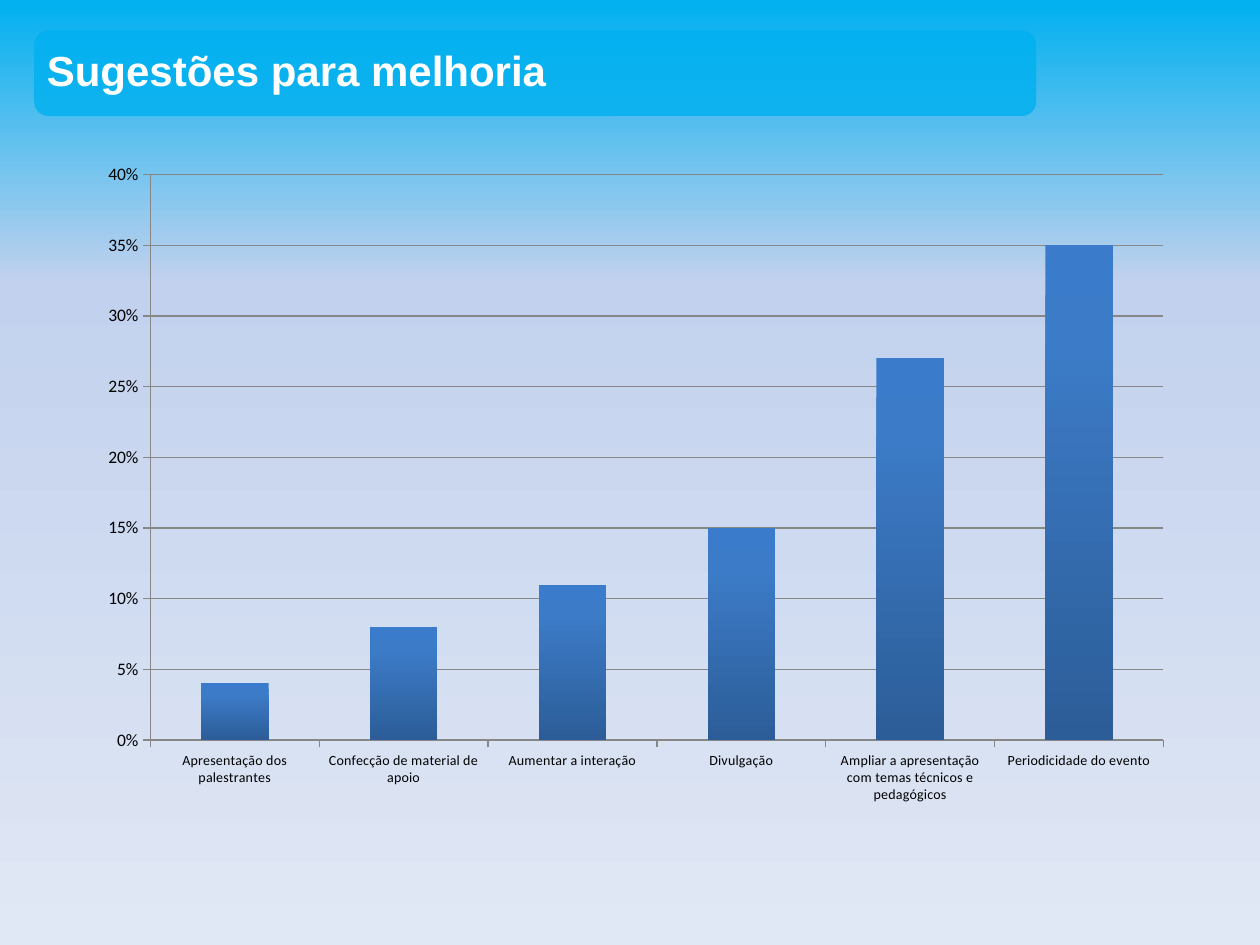
from dataclasses import dataclass

from lxml import etree
from pptx import Presentation
from pptx import util as u
from pptx.chart.data import CategoryChartData
from pptx.dml.color import RGBColor
from pptx.enum import chart as ch, shapes, text
from pptx.oxml.ns import qn


@dataclass(frozen=True)
class Theme:
    sky: str = "00B0F0"
    white: str = "FFFFFF"
    ink: str = "000000"
    rule: str = "878787"
    back: tuple = ((0, "00B0F0"), (30, "C2D1ED"), (100, "E1E8F5"))
    bar: tuple = ((0, "3A7CCB"), (20, "3C7BC7"), (100, "2C5D98"))
    head: str = "Arial"
    body: str = "Calibri"
    title: int = 24
    axis: int = 10
    label: int = 8


T = Theme()
DATA = {
    "Apresentação dos palestrantes": 0.04,
    "Confecção de material de apoio": 0.08,
    "Aumentar a interação": 0.11,
    "Divulgação": 0.15,
    "Ampliar a apresentação com temas técnicos e pedagógicos": 0.27,
    "Periodicidade do evento": 0.35,
}


def style(font, size, name, color, bold=False):
    font.size, font.name, font.bold = u.Pt(size), name, bold
    font.color.rgb = RGBColor.from_string(color)


def write(frame, words, align=text.PP_ALIGN.LEFT, **form):
    frame.text = words
    frame.word_wrap = True
    frame.vertical_anchor = text.MSO_ANCHOR.MIDDLE
    par = frame.paragraphs[0]
    par.alignment = align
    style(par.runs[0].font, **form)


def blend(fill, root, stops):
    """Fill from top to bottom with stops of (percent, colour)."""
    fill.gradient()
    grad = root.find(".//" + qn("a:gradFill"))
    for kid in list(grad):
        grad.remove(kid)
    group = etree.SubElement(grad, qn("a:gsLst"))
    for pos, color in stops:
        stop = etree.SubElement(group, qn("a:gs"), pos=str(pos * 1000))
        etree.SubElement(stop, qn("a:srgbClr"), val=color)
    etree.SubElement(grad, qn("a:lin"), ang="5400000", scaled="0")


def fix_plot(chart, **box):
    """Set the inner plot area as fractions of the chart."""
    area = chart.element.find(".//" + qn("c:plotArea"))
    for old in area.findall(qn("c:layout")):
        area.remove(old)
    layout = etree.Element(qn("c:layout"))
    area.insert(0, layout)
    manual = etree.SubElement(layout, qn("c:manualLayout"))
    parts = {"layoutTarget": "inner", "xMode": "edge", "yMode": "edge", **box}
    for tag, val in parts.items():
        etree.SubElement(manual, qn("c:" + tag), val=str(val))


def add_head(slide, x, y, w, h):
    # Translucent band behind the title
    band = slide.shapes.add_shape(
        shapes.MSO_SHAPE.ROUNDED_RECTANGLE, x, y, w, h)
    band.shadow.inherit = False
    band.fill.solid()
    band.fill.fore_color.rgb = RGBColor.from_string(T.sky)
    color = band.element.spPr.find(".//" + qn("a:srgbClr"))
    etree.SubElement(color, qn("a:alpha"), val="80000")
    band.line.fill.background()
    slide.shapes.element.insert(2, band.element)

    # Title
    title = slide.shapes.title
    title.left, title.top = x, y + u.Cm(0.15)
    title.width, title.height = w, u.Cm(1.27)
    write(title.text_frame, "Sugestões para melhoria",
          size=T.title, name=T.head, color=T.white, bold=True)


def add_bars(slide, x, y, w, h):
    data = CategoryChartData(number_format="0%")
    data.categories = list(DATA)
    data.add_series("Series 1", list(DATA.values()))
    chart = slide.shapes.add_chart(
        ch.XL_CHART_TYPE.COLUMN_CLUSTERED, x, y, w, h, data).chart
    chart.has_legend = chart.has_title = False
    style(chart.font, T.axis, T.body, T.ink)
    fix_plot(chart, x=0.06, y=0.03, w=0.92, h=0.85)

    # Columns
    plot = chart.plots[0]
    plot.gap_width = 150
    plot.vary_by_categories = False
    cols = plot.series[0]
    blend(cols.format.fill, cols._element, T.bar)

    # Axes and grid
    cat, val = chart.category_axis, chart.value_axis
    style(cat.tick_labels.font, T.label, T.body, T.ink)
    val.minimum_scale, val.maximum_scale, val.major_unit = 0, 0.4, 0.05
    val.tick_labels.number_format = "0%"
    val.tick_labels.number_format_is_linked = False
    val.has_major_gridlines = True
    for axis in (cat, val):
        axis.major_tick_mark = ch.XL_TICK_MARK.OUTSIDE
    for part in (cat, val, val.major_gridlines):
        part.format.line.width = u.Pt(0.75)
        part.format.line.color.rgb = RGBColor.from_string(T.rule)


def main():
    deck = Presentation()
    deck.slide_width, deck.slide_height = u.Cm(25.4), u.Cm(19.05)
    slide = deck.slides.add_slide(deck.slide_layouts[5])
    blend(slide.background.fill, slide.element, T.back)
    add_head(slide, u.Cm(0.69), u.Cm(0.61), u.Cm(20.2), u.Cm(1.73))
    add_bars(slide, u.Cm(1.7), u.Cm(3.12), u.Cm(22.2), u.Cm(13.41))
    deck.save("out.pptx")


if __name__ == "__main__":
    main()
